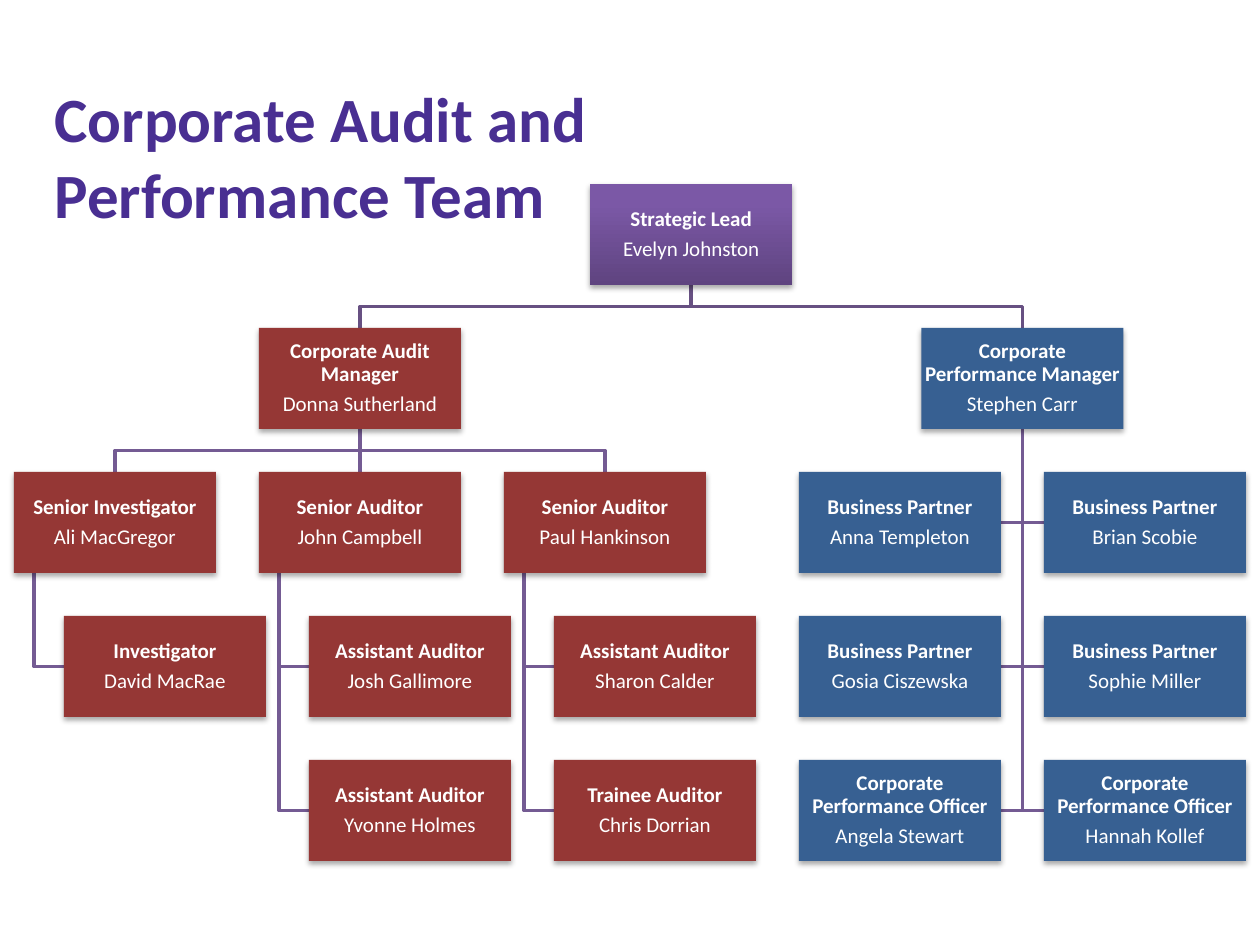
from copy import deepcopy

from lxml.etree import SubElement
from pptx import Presentation
from pptx.dml.color import RGBColor
from pptx.enum.shapes import MSO_CONNECTOR, MSO_SHAPE
from pptx.enum.text import MSO_ANCHOR, MSO_AUTO_SIZE, PP_ALIGN
from pptx.oxml.ns import qn
from pptx.util import Emu, Pt

# Content: boxes as (role, name), reports hang below their senior
TITLE = ("Corporate Audit and", "Performance Team")
LEAD = ("Strategic Lead", "Evelyn Johnston")
AUDIT_MANAGER = ("Corporate Audit Manager", "Donna Sutherland")
AUDIT_TEAMS = [
    (("Senior Investigator", "Ali MacGregor"),
     [("Investigator", "David MacRae")]),
    (("Senior Auditor", "John Campbell"),
     [("Assistant Auditor", "Josh Gallimore"), ("Assistant Auditor", "Yvonne Holmes")]),
    (("Senior Auditor", "Paul Hankinson"),
     [("Assistant Auditor", "Sharon Calder"), ("Trainee Auditor", "Chris Dorrian")]),
]
PERFORMANCE_MANAGER = ("Corporate Performance Manager", "Stephen Carr")
PERFORMANCE_PAIRS = [
    (("Business Partner", "Anna Templeton"), ("Business Partner", "Brian Scobie")),
    (("Business Partner", "Gosia Ciszewska"), ("Business Partner", "Sophie Miller")),
    (("Corporate Performance Officer", "Angela Stewart"),
     ("Corporate Performance Officer", "Hannah Kollef")),
]

THEME = {
    "font": "Calibri", "title_size": 36, "box_size": 12, "line_width": 2,
    "title": "492F92", "text": "FFFFFF", "audit": "953735", "performance": "376092",
    "lead": [(0, "5F4480"), (0.8, "7B58A6"), (1, "7C57A8")],
    "lead_line": "675082", "line": "745B93",
}

# Grid, in px
PX = 914400 / 126
BOX_W, BOX_H = 202, 101
TOP, ROW_STEP, COL_STEP = 184, 144, 245
AUDIT_X, PERFORMANCE_X = 14, 799
INDENT, STEM = 50, 20


def emu(px):
    return Emu(round(px * PX))


def rgb(name):
    return RGBColor.from_string(THEME.get(name, name))


def style_run(p, size, color, bold):
    for r in p.runs:
        r.font.name, r.font.size, r.font.bold = THEME["font"], Pt(size), bold
        r.font.color.rgb = rgb(color)


def fill_gradient(fill, stops):
    fill.gradient()
    fill.gradient_angle = 90
    first = fill.gradient_stops[0]._gs
    first.getparent().append(deepcopy(first))
    for stop, (position, color) in zip(fill.gradient_stops, stops):
        stop.position = position
        stop.color.rgb = rgb(color)


def add_shadow(s):
    s.shadow.inherit = False
    effects = s._element.spPr.find(qn("a:effectLst"))
    shadow = SubElement(effects, qn("a:outerShdw"), blurRad="40000", dist="23000",
                        dir="5400000", rotWithShape="0")
    color = SubElement(shadow, qn("a:srgbClr"), val="000000")
    SubElement(color, qn("a:alpha"), val="35000")


def add_box(person, x, row, color):
    s = shapes.add_shape(MSO_SHAPE.RECTANGLE, emu(x), emu(TOP + row * ROW_STEP),
                         emu(BOX_W), emu(BOX_H))
    if color == "lead":
        fill_gradient(s.fill, THEME["lead"])
    else:
        s.fill.solid()
        s.fill.fore_color.rgb = rgb(color)
    s.line.fill.background()
    add_shadow(s)
    tf = s.text_frame
    tf.word_wrap, tf.vertical_anchor = True, MSO_ANCHOR.MIDDLE
    tf.margin_left = tf.margin_right = tf.margin_top = tf.margin_bottom = emu(1)
    tf.text = "\n".join(person)
    for p, bold in zip(tf.paragraphs, (True, False)):
        p.alignment, p.line_spacing, p.space_after = PP_ALIGN.CENTER, 0.9, Pt(4.5)
        style_run(p, THEME["box_size"], "text", bold)
    return s


def finish_line(s, color):
    """Colour a line and place it behind the boxes."""
    s.line.color.rgb, s.line.width = rgb(color), Pt(THEME["line_width"])
    tree = s._element.getparent()
    tree.insert(2, s._element)


def add_path(points, color="line"):
    builder = shapes.build_freeform(*points[0], scale=1.0)
    builder.add_line_segments(points[1:], close=False)
    s = builder.convert_to_shape()
    s.fill.background()
    s.shadow.inherit = False
    finish_line(s, color)


def middle_x(s):
    return s.left + s.width // 2


def link_down(senior, report, color="line"):
    """Run from the bottom of one box to the top of another."""
    x1, y1, x2, y2 = middle_x(senior), senior.top + senior.height, middle_x(report), report.top
    if x1 == x2:
        s = shapes.add_connector(MSO_CONNECTOR.STRAIGHT, x1, y1, x2, y2)
        s.begin_connect(senior, 2)
        s.end_connect(report, 0)
        SubElement(s._element.spPr, qn("a:effectLst"))
        finish_line(s, color)
    else:
        y = (y1 + y2) // 2
        add_path([(x1, y1), (x1, y), (x2, y), (x2, y2)], color)


def link_side(senior, report, x):
    """Drop from a box at x, then turn to the nearer side of another."""
    y = report.top + report.height // 2
    side = report.left if report.left > x else report.left + report.width
    add_path([(x, senior.top + senior.height), (x, y), (side, y)])


prs = Presentation()
prs.slide_width, prs.slide_height = emu(1260), emu(945)
slide = prs.slides.add_slide(prs.slide_layouts[5])
shapes = slide.shapes

# Title
title = shapes.title
title.left, title.top, title.width, title.height = map(emu, (42, 68, 1014, 175))
tf = title.text_frame
tf.auto_size, tf.word_wrap = MSO_AUTO_SIZE.NONE, True
tf.vertical_anchor = MSO_ANCHOR.MIDDLE
tf.text = "\n".join(TITLE)
for p in tf.paragraphs:
    p.alignment = PP_ALIGN.LEFT
    style_run(p, THEME["title_size"], "title", True)

# Lead and the two managers
audit_manager_x = AUDIT_X + COL_STEP
performance_manager_x = PERFORMANCE_X + COL_STEP / 2
lead = add_box(LEAD, (audit_manager_x + performance_manager_x) / 2, 0, "lead")
audit_manager = add_box(AUDIT_MANAGER, audit_manager_x, 1, "audit")
performance_manager = add_box(PERFORMANCE_MANAGER, performance_manager_x, 1, "performance")
for manager in (audit_manager, performance_manager):
    link_down(lead, manager, "lead_line")

# Audit teams, one column each
for col, (head, members) in enumerate(AUDIT_TEAMS):
    x = AUDIT_X + col * COL_STEP
    senior = add_box(head, x, 2, "audit")
    link_down(audit_manager, senior)
    for row, member in enumerate(members, 3):
        link_side(senior, add_box(member, x + INDENT, row, "audit"), emu(x + STEM))

# Performance team, in pairs either side of the stem
for row, pair in enumerate(PERFORMANCE_PAIRS, 2):
    for col, person in enumerate(pair):
        s = add_box(person, PERFORMANCE_X + col * COL_STEP, row, "performance")
        link_side(performance_manager, s, middle_x(performance_manager))

prs.save("out.pptx")
